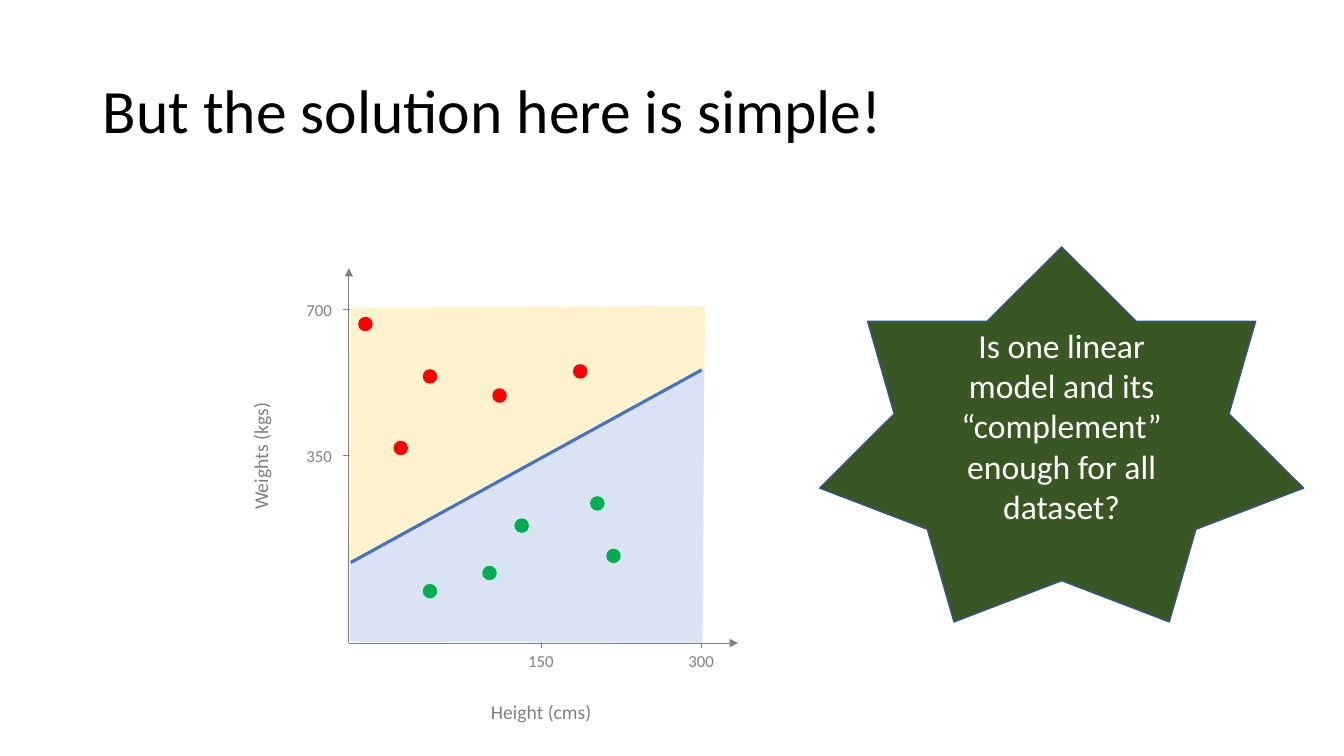
import pptx
import pptx.util
import pptx.dml.color
import pptx.enum.shapes
import pptx.enum.text
import pptx.oxml
import pptx.oxml.ns
from pptx.util import Inches

RGBColor = pptx.dml.color.RGBColor
SHAPE = pptx.enum.shapes.MSO_SHAPE
ALIGN = pptx.enum.text.PP_ALIGN
ANCHOR = pptx.enum.text.MSO_ANCHOR

BLACK = RGBColor(0x00, 0x00, 0x00)
WHITE = RGBColor(0xFF, 0xFF, 0xFF)
GRAY = RGBColor(0x80, 0x80, 0x80)
BLUE = RGBColor(0x44, 0x72, 0xC4)
RED = RGBColor(0xFF, 0x00, 0x00)
GREEN = RGBColor(0x00, 0xB0, 0x50)
CREAM = RGBColor(0xFF, 0xF2, 0xCC)
PALE_BLUE = RGBColor(0xDA, 0xE3, 0xF3)
DARK_GREEN = RGBColor(0x38, 0x57, 0x23)
STAR_EDGE = RGBColor(0x32, 0x54, 0x91)

FONT = "Calibri"
ORIGIN_X, ORIGIN_Y = 3.46, 6.38
DOT_SIZE = 0.13

# Left and top of each dot, in inches
RED_DOTS = [(3.56, 3.15), (3.91, 4.38), (4.2, 3.67), (4.89, 3.86), (5.69, 3.62)]
GREEN_DOTS = [(5.86, 4.93), (6.02, 5.45), (4.79, 5.62), (5.11, 5.15), (4.2, 5.8)]

# Corners of the two regions, in inches
UPPER_REGION = [(6.98, 3.7), (6.99, 3.04), (3.48, 3.06), (3.47, 5.6)]
LOWER_REGION = [(3.48, 5.58), (3.48, 6.36), (6.96, 6.37), (6.98, 3.67)]


def format_text(frame, size, color, align):
    for paragraph in frame.paragraphs:
        paragraph.alignment = align
        for run in paragraph.runs:
            run.font.name = FONT
            run.font.size = pptx.util.Pt(size)
            run.font.color.rgb = color


def paint(shape, fill, edge):
    shape.shadow.inherit = False
    shape.fill.solid()
    shape.fill.fore_color.rgb = fill
    shape.line.color.rgb = edge
    shape.line.width = pptx.util.Pt(1)


def add_label(slide, text, left, top, width, height, size, rotation=0):
    label = slide.shapes.add_textbox(
        Inches(left), Inches(top), Inches(width), Inches(height))
    label.rotation = rotation
    label.text_frame.word_wrap = False
    label.text_frame.text = text
    format_text(label.text_frame, size, GRAY, ALIGN.LEFT)


def add_line(slide, start, end, color=GRAY, width=0.5, arrow=False):
    line = slide.shapes.add_connector(
        pptx.enum.shapes.MSO_CONNECTOR.STRAIGHT,
        *(Inches(value) for value in (*start, *end)))
    line.line.color.rgb = color
    line.line.width = pptx.util.Pt(width)
    if arrow:
        head = pptx.oxml.parse_xml(
            f'<a:tailEnd {pptx.oxml.ns.nsdecls("a")} type="triangle"/>')
        line.line._get_or_add_ln().append(head)
    line._element.spPr.append(
        pptx.oxml.parse_xml(f'<a:effectLst {pptx.oxml.ns.nsdecls("a")}/>'))


def add_region(slide, corners, color):
    points = [(Inches(x), Inches(y)) for x, y in corners]
    builder = slide.shapes.build_freeform(*points[0])
    builder.add_line_segments(points[1:], close=True)
    paint(builder.convert_to_shape(), color, color)


def add_dots(slide, positions, color):
    for left, top in positions:
        dot = slide.shapes.add_shape(
            SHAPE.OVAL, Inches(left), Inches(top), Inches(DOT_SIZE), Inches(DOT_SIZE))
        paint(dot, color, color)


def add_title(slide, text):
    title = slide.shapes.title
    title.left, title.top = Inches(0.92), Inches(0.4)
    title.width, title.height = Inches(11.5), Inches(1.45)
    title.text_frame.text = text
    title.text_frame.vertical_anchor = ANCHOR.MIDDLE
    title.text_frame.paragraphs[0].line_spacing = 0.9
    format_text(title.text_frame, 44, BLACK, ALIGN.LEFT)


def add_axes(slide):
    add_label(slide, "Height (cms)", 4.77, 6.89, 1.21, 0.34, 14)
    add_label(slide, "Weights (kgs)", 1.95, 4.35, 1.27, 0.34, 14, rotation=270)
    origin = (ORIGIN_X, ORIGIN_Y)
    add_line(slide, origin, (ORIGIN_X, 2.66), arrow=True)
    add_line(slide, origin, (7.32, ORIGIN_Y), arrow=True)
    for text, x in (("300", 6.96), ("150", 5.37)):
        add_line(slide, (x, ORIGIN_Y - 0.05), (x, ORIGIN_Y + 0.05))
        add_label(slide, text, x - 0.23, 6.41, 0.46, 0.3, 12)
    for text, y in (("700", 3.07), ("350", 4.52)):
        add_line(slide, (ORIGIN_X + 0.06, y), (ORIGIN_X - 0.06, y))
        add_label(slide, text, 2.94, y - 0.15, 0.46, 0.3, 12)


def add_star(slide, text):
    star = slide.shapes.add_shape(
        SHAPE.STAR_7_POINT, Inches(8.13), Inches(2.45), Inches(4.8), Inches(3.72))
    paint(star, DARK_GREEN, STAR_EDGE)
    star.text_frame.word_wrap = True
    star.text_frame.vertical_anchor = ANCHOR.MIDDLE
    star.text_frame.text = text
    format_text(star.text_frame, 24, WHITE, ALIGN.CENTER)


def main():
    deck = pptx.Presentation()
    deck.slide_width, deck.slide_height = Inches(13.33), Inches(7.5)
    slide = deck.slides.add_slide(deck.slide_layouts.get_by_name("Title Only"))

    add_title(slide, "But the solution here is simple!")

    # Plot: axes, regions, boundary between them, data points
    add_axes(slide)
    add_region(slide, UPPER_REGION, CREAM)
    add_region(slide, LOWER_REGION, PALE_BLUE)
    add_line(slide, LOWER_REGION[0], (6.96, 3.67), BLUE, 2.25)
    add_dots(slide, RED_DOTS, RED)
    add_dots(slide, GREEN_DOTS, GREEN)

    # Question
    add_star(slide, "Is one linear model and its “complement” enough for all dataset?")

    deck.save("out.pptx")


if __name__ == "__main__":
    main()
